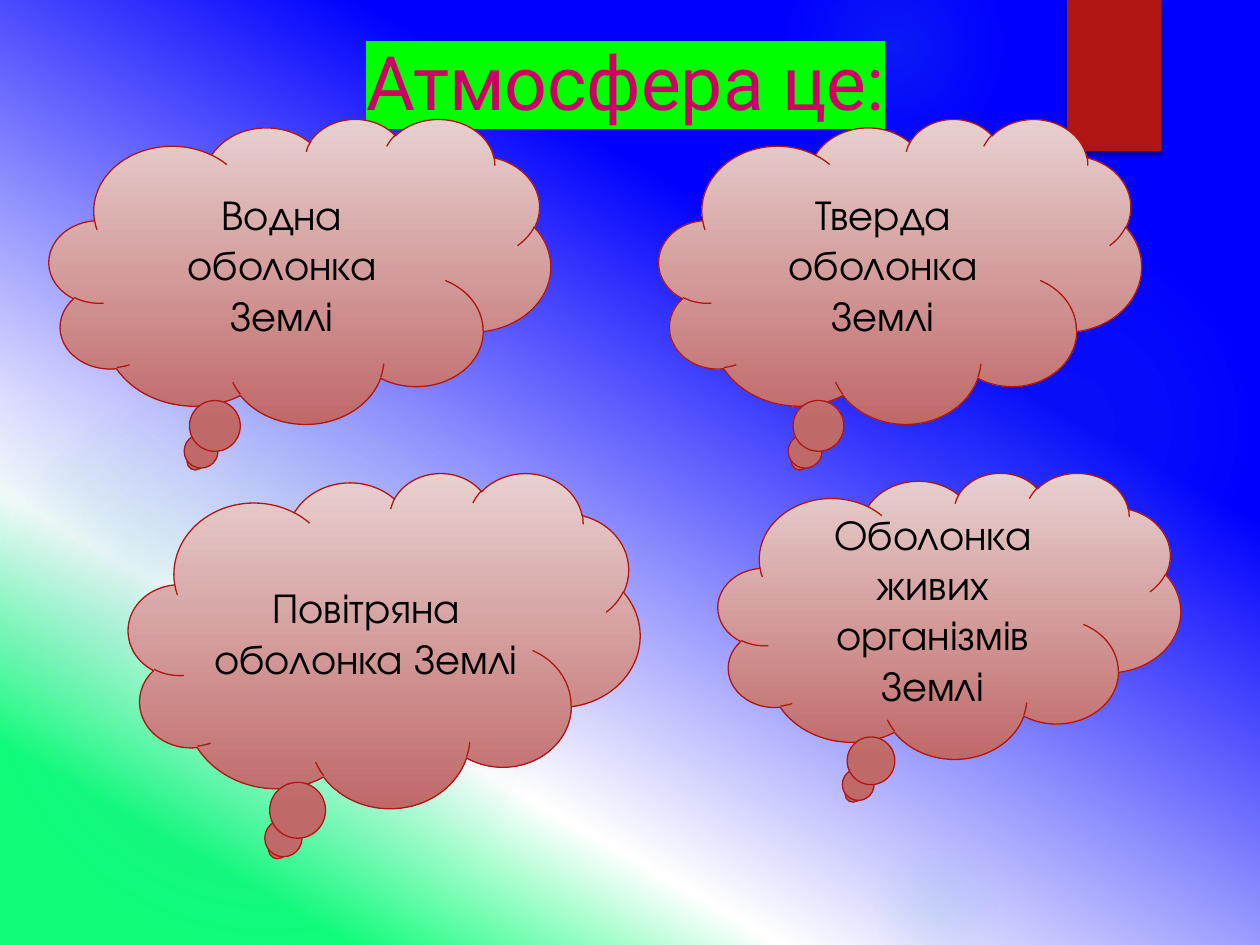
import pptx
import pptx.util
import pptx.dml.color
import pptx.enum.shapes
import pptx.enum.text
import pptx.oxml
import pptx.oxml.ns

Inches, Pt = pptx.util.Inches, pptx.util.Pt
RGB = pptx.dml.color.RGBColor.from_string
Shape = pptx.enum.shapes.MSO_SHAPE
Align = pptx.enum.text.PP_ALIGN
Anchor = pptx.enum.text.MSO_ANCHOR
qn = pptx.oxml.ns.qn
NS = pptx.oxml.ns.nsdecls("a")

COLORS = {
    "blue": "0000FF", "white": "FFFFFF", "green": "0FFC79", "glow": "50B9C1",
    "red": "B01513", "title": "CC0066", "mark": "00FF00", "text": "000000",
    "light": "E8D1D0", "dark": "C06969",
}


def swap_fill(parent, stops, angle=None):
    """Replace a solid fill by a gradient of (position, colour, opacity) stops.

    Without an angle the gradient is circular.
    """
    marks = "".join(
        f'<a:gs pos="{pos * 1000}"><a:srgbClr val="{COLORS[name]}">'
        f'<a:alpha val="{alpha * 1000}"/></a:srgbClr></a:gs>'
        for pos, name, alpha in stops)
    if angle is None:
        course = ('<a:path path="circle"><a:fillToRect l="50000" t="50000" '
                  'r="50000" b="50000"/></a:path>')
    else:
        course = f'<a:lin ang="{angle * 60000}" scaled="0"/>'
    grad = pptx.oxml.parse_xml(
        f'<a:gradFill {NS} rotWithShape="1"><a:gsLst>{marks}</a:gsLst>{course}</a:gradFill>')
    parent.replace(parent.find(qn("a:solidFill")), grad)


def add_shape(slide, kind, box, color):
    shape = slide.shapes.add_shape(kind, *map(Inches, box))
    shape.shadow.inherit = False
    shape.fill.solid()
    shape.fill.fore_color.rgb = RGB(COLORS[color])
    shape.line.fill.background()
    return shape


def add_text(shape, text, font, size, color):
    frame = shape.text_frame
    frame.word_wrap = True
    frame.vertical_anchor = Anchor.MIDDLE
    para = frame.paragraphs[0]
    para.alignment = Align.CENTER
    run = para.add_run()
    run.text = text
    run.font.size = Pt(size)
    run.font.color.rgb = RGB(COLORS[color])
    run.font.name = font
    return para, run


def add_backdrop(slide):
    slide.background.fill.solid()
    swap_fill(slide.element.find(".//" + qn("p:bgPr")),
              [(31, "blue", 100), (73, "white", 91), (88, "green", 100)], 120)


def add_glow(slide, left, top, size, inner, middle, edge):
    glow = add_shape(slide, Shape.OVAL, (left, top, size, size), "glow")
    swap_fill(glow.element.spPr,
              [(0, "glow", inner), (36, "glow", middle), (edge, "glow", 0)])


def add_ribbon(slide, box):
    ribbon = add_shape(slide, Shape.RECTANGLE, box, "red")
    effects = ribbon.element.spPr.find(qn("a:effectLst"))
    effects.append(pptx.oxml.parse_xml(
        f'<a:outerShdw {NS} blurRad="{Pt(3)}" dist="{Pt(2)}" dir="5400000" rotWithShape="0">'
        '<a:srgbClr val="000000"><a:alpha val="45000"/></a:srgbClr></a:outerShdw>'))


def add_title(slide, box, text):
    title = slide.shapes.add_textbox(*map(Inches, box))
    para, run = add_text(title, text, "Roboto", 42.9, "title")
    para.line_spacing = 0.9
    mark = pptx.oxml.parse_xml(
        f'<a:highlight {NS}><a:srgbClr val="{COLORS["mark"]}"/></a:highlight>')
    run.font.fill  # the highlight follows the text fill
    run.font._element.find(qn("a:solidFill")).addnext(mark)


def add_cloud(slide, box, text):
    cloud = add_shape(slide, Shape.CLOUD_CALLOUT, box, "light")
    swap_fill(cloud.element.spPr, [(0, "light", 100), (100, "dark", 100)], 90)
    cloud.line.color.rgb = RGB(COLORS["red"])
    cloud.line.width = Pt(0.75)
    add_text(cloud, text, "TeX Gyre Adventor", 24, "text")


GLOWS = [
    (6.89, 1.83, 3.08, 7, 6, 69),
    (6.22, -0.5, 1.75, 14, 7, 73),
    (6.89, 6.67, 1.08, 9, 5, 66),
    (-0.17, 2.92, 4.58, 11, 10, 75),
    (-0.92, 3.17, 2.58, 8, 8, 72),
]
UPPER, LOWER = 0.94, 3.75
CLOUDS = [
    ((0.39, UPPER, 3.98, 2.42), "Водна оболонка Землі"),
    ((5.7, LOWER, 3.67, 2.27), "Оболонка живих організмів Землі"),
    ((1.02, LOWER, 4.06, 2.66), "Повітряна оболонка Землі"),
    ((5.23, UPPER, 3.83, 2.42), "Тверда оболонка Землі"),
]


def main():
    deck = pptx.Presentation()
    deck.slide_width, deck.slide_height = Inches(10), Inches(7.5)
    slide = deck.slides.add_slide(deck.slide_layouts[6])
    add_backdrop(slide)
    for glow in GLOWS:
        add_glow(slide, *glow)
    add_ribbon(slide, (8.47, 0, 0.75, 1.2))
    add_title(slide, (0.28, 0.29, 9.37, 0.79), "Атмосфера це:")
    for box, text in CLOUDS:
        add_cloud(slide, box, text)
    deck.save("out.pptx")


if __name__ == "__main__":
    main()
